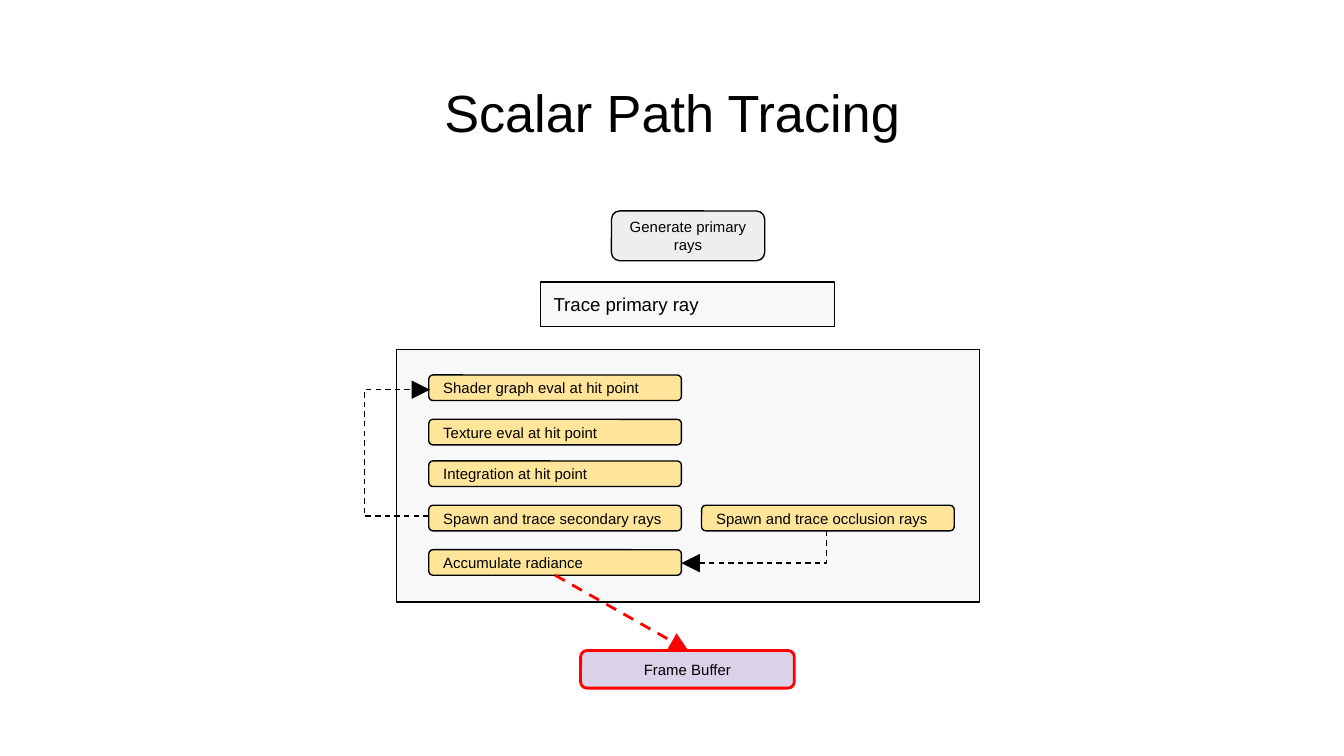
"""Build the Scalar Path Tracing flow slide."""
from lxml.etree import SubElement
from pptx import Presentation
from pptx.dml.color import RGBColor
from pptx.enum.dml import MSO_LINE as Dash
from pptx.enum.shapes import MSO_CONNECTOR as Link, MSO_SHAPE as Shape
from pptx.enum.text import MSO_ANCHOR as Anchor, PP_ALIGN as Align
from pptx.oxml.ns import qn
from pptx.util import Inches, Pt

COLORS = {"ink": "000000", "panel": "F8F8F8", "step": "FFE599",
          "start": "EEEEEE", "buffer": "D9D2E9", "red": "FF0000"}
LEFT, RIGHT, WIDE, HIGH = 3.19, 5.22, 1.88, 0.19
STEPS = [
    ("Shader graph eval at hit point", LEFT, 2.79),
    ("Texture eval at hit point", LEFT, 3.12),
    ("Integration at hit point", LEFT, 3.43),
    ("Spawn and trace secondary rays", LEFT, 3.76),
    ("Spawn and trace occlusion rays", RIGHT, 3.76),
    ("Accumulate radiance", LEFT, 4.09),
]


def color(name):
    return RGBColor.from_string(COLORS[name])


def write(shape, text, size=8, align=Align.LEFT, anchor=Anchor.MIDDLE):
    frame = shape.text_frame
    frame.word_wrap = True
    frame.vertical_anchor = anchor
    frame.margin_left = frame.margin_right = Inches(0.1)
    frame.margin_top = frame.margin_bottom = Inches(0.1)
    para = frame.paragraphs[0]
    para.alignment = align
    run = para.add_run()
    run.text = text
    run.font.size = Pt(size)
    run.font.name = "Arial"
    run.font.color.rgb = color("ink")


def stroke(line, ink="ink", width=0.75):
    line.color.rgb = color(ink)
    line.width = Pt(width)


def box(slide, kind, area, fill, text="", ink="ink", width=0.75, **style):
    shape = slide.shapes.add_shape(kind, *map(Inches, area))
    shape.shadow.inherit = False
    shape.fill.solid()
    shape.fill.fore_color.rgb = color(fill)
    stroke(shape.line, ink, width)
    if text:
        write(shape, text, **style)


def arrow(shape, **style):
    stroke(shape.line, **style)
    shape.line.dash_style = Dash.DASH
    props = shape._element.spPr
    SubElement(props.find(qn("a:ln")), qn("a:tailEnd"),
               type="triangle", w="lg", len="lg")
    if props.find(qn("a:effectLst")) is None:
        SubElement(props, qn("a:effectLst"))


def link(slide, kind, start, end, **style):
    line = slide.shapes.add_connector(kind, *map(Inches, start + end))
    arrow(line, **style)
    return line


def bend(slide, start, end):
    mid_x, mid_y = ((a + b) / 2 for a, b in zip(start, end))
    half_w, half_h = (end[1] - start[1]) / 2, (start[0] - end[0]) / 2
    line = link(slide, Link.ELBOW, (mid_x - half_w, mid_y - half_h),
                (mid_x + half_w, mid_y + half_h))
    props = line._element.spPr
    props.find(qn("a:xfrm")).set("rot", str(90 * 60000))
    props.find(qn("a:prstGeom")).set("prst", "bentConnector2")


def loop(slide, points):
    first, *rest = [tuple(map(Inches, point)) for point in points]
    pen = slide.shapes.build_freeform(*first)
    pen.add_line_segments(rest, close=False)
    shape = pen.convert_to_shape()
    shape.shadow.inherit = False
    shape.fill.background()
    arrow(shape)


def main():
    deck = Presentation()
    deck.slide_width = Inches(10)
    deck.slide_height = Inches(10 * 9 / 16)
    slide = deck.slides.add_slide(deck.slide_layouts[6])
    box(slide, Shape.RECTANGLE, (4.02, 2.1, 2.19, 0.33), "panel",
        "Trace primary ray", size=10)
    box(slide, Shape.RECTANGLE, (2.95, 2.6, 4.34, 1.88), "panel")
    box(slide, Shape.ROUNDED_RECTANGLE, (4.55, 1.57, 1.14, 0.37), "start",
        "Generate primary rays", align=Align.CENTER)
    box(slide, Shape.ROUNDED_RECTANGLE, (4.32, 4.84, 1.59, 0.28), "buffer",
        "Frame Buffer", ink="red", width=1.5, align=Align.CENTER)
    title = slide.shapes.add_textbox(*map(Inches, (3.06, 0.5, 3.88, 0.73)))
    write(title, "Scalar Path Tracing", size=28, align=Align.CENTER,
          anchor=Anchor.TOP)
    for text, left, top in STEPS:
        box(slide, Shape.ROUNDED_RECTANGLE, (left, top, WIDE, HIGH), "step", text)
    bend(slide, (6.15, 3.95), (5.07, 4.19))
    loop(slide, [(LEFT, 3.84), (2.71, 3.84), (2.71, 2.9), (3.2, 2.9)])
    link(slide, Link.STRAIGHT, (4.13, 4.28), (5.12, 4.84), ink="red", width=1.5)
    deck.save("out.pptx")


if __name__ == "__main__":
    main()
